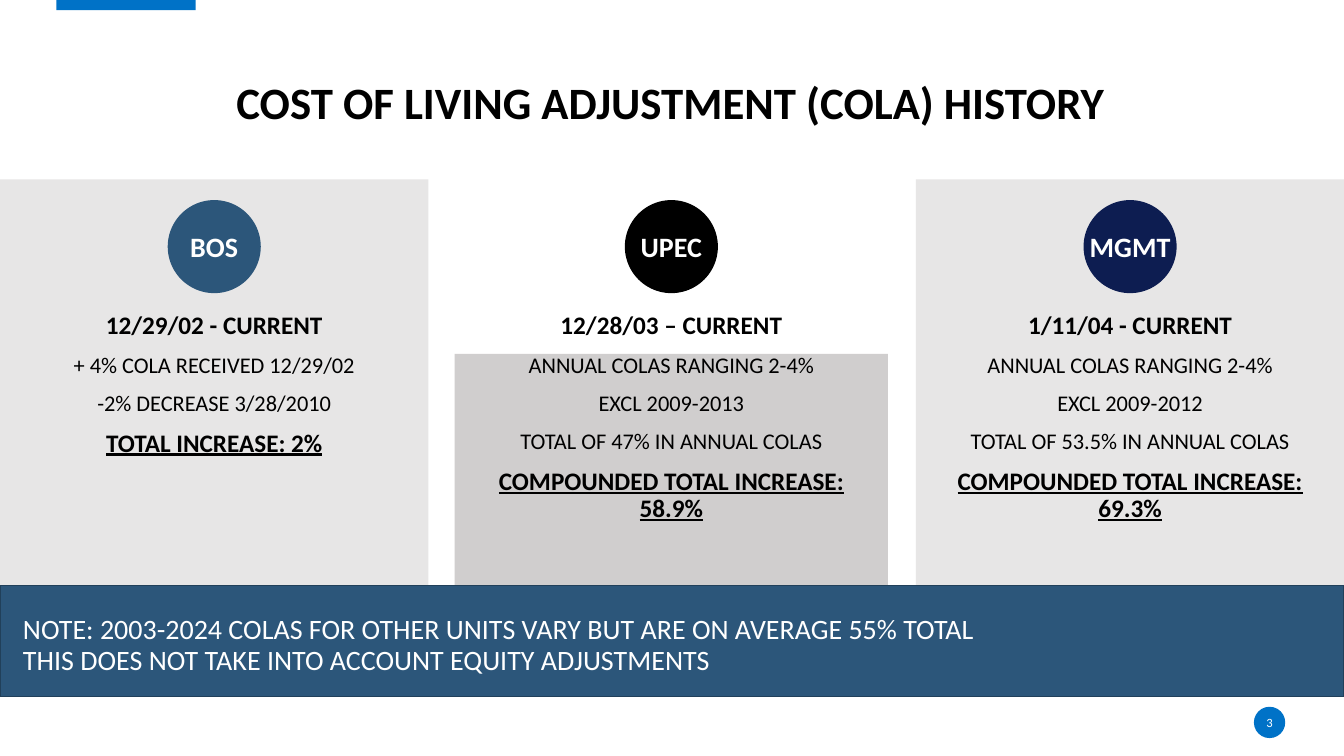
import pptx
import pptx.util
import pptx.dml.color
import pptx.enum.shapes
import pptx.enum.text

Cm = pptx.util.Cm
Pt = pptx.util.Pt
RGBColor = pptx.dml.color.RGBColor
SHAPE = pptx.enum.shapes.MSO_SHAPE
ALIGN = pptx.enum.text.PP_ALIGN
ANCHOR = pptx.enum.text.MSO_ANCHOR

WHITE = RGBColor(0xFF, 0xFF, 0xFF)
BLACK = RGBColor(0x00, 0x00, 0x00)
PALE = RGBColor(0xE7, 0xE6, 0xE6)
GREY = RGBColor(0xD0, 0xCE, 0xCE)
STEEL = RGBColor(0x2C, 0x56, 0x7A)
EDGE = RGBColor(0x21, 0x40, 0x5A)
NAVY = RGBColor(0x0D, 0x1D, 0x51)
BLUE = RGBColor(0x00, 0x72, 0xC7)

WIDE, HIGH = 33.87, 19.05
FONT = "Calibri"

# Each unit: panel left, panel width, panel fill, body width, body fill,
# badge fill, label, period, detail lines, total lines
UNITS = [
    (0, 10.8, PALE, 9.58, None, STEEL, "BOS", "12/29/02 - CURRENT",
     ["+ 4% COLA RECEIVED 12/29/02", "-2% DECREASE 3/28/2010"],
     ["TOTAL INCREASE: 2%"]),
    (11.46, 10.92, None, 10.92, GREY, BLACK, "UPEC", "12/28/03 – CURRENT",
     ["ANNUAL COLAS RANGING 2-4%", "EXCL 2009-2013",
      "TOTAL OF 47% IN ANNUAL COLAS"],
     ["COMPOUNDED TOTAL INCREASE:", "58.9%"]),
    (23.08, 10.8, PALE, 10.19, None, NAVY, "MGMT", "1/11/04 - CURRENT",
     ["ANNUAL COLAS RANGING 2-4%", "EXCL 2009-2012",
      "TOTAL OF 53.5% IN ANNUAL COLAS"],
     ["COMPOUNDED TOTAL INCREASE: 69.3%"]),
]


def add_form(slide, kind, box, fill, line=None):
    form = slide.shapes.add_shape(kind, *[Cm(side) for side in box])
    form.shadow.inherit = False
    form.fill.solid()
    form.fill.fore_color.rgb = fill
    if line is None:
        form.line.fill.background()
    else:
        form.line.color.rgb = line
        form.line.width = Pt(1)
    return form


def set_frame(shape, anchor, wrap=True):
    frame = shape.text_frame
    frame.word_wrap = wrap
    frame.vertical_anchor = anchor
    frame.margin_left = frame.margin_right = 0
    frame.margin_top = frame.margin_bottom = 0
    return frame


def add_text(slide, box, anchor):
    area = slide.shapes.add_textbox(*[Cm(side) for side in box])
    return set_frame(area, anchor)


def add_para(frame, lines, size, color=BLACK, bold=False, under=False,
             align=ALIGN.CENTER, gap=0, space=0.9):
    para = frame.paragraphs[0]
    if para.runs:
        para = frame.add_paragraph()
        para.space_before = Pt(gap)
    else:
        para.space_before = Pt(0)
    para.alignment = align
    para.line_spacing = space
    for count, line in enumerate(lines):
        if count:
            para.add_line_break()
        run = para.add_run()
        run.text = line
        run.font.name = FONT
        run.font.size = Pt(size)
        run.font.bold = bold
        run.font.underline = under
        run.font.color.rgb = color


def add_badge(slide, box, fill, label, size, bold, line=None):
    badge = add_form(slide, SHAPE.OVAL, box, fill, line)
    frame = set_frame(badge, ANCHOR.MIDDLE, wrap=False)
    add_para(frame, [label], size, WHITE, bold, space=1.0)


def add_head(slide, left, top, width, height):
    # Accent tab on the top edge
    add_form(slide, SHAPE.RECTANGLE, (left, 0, 3.51, 0.26), BLUE)
    # Title
    title = slide.shapes.title
    title.left, title.top = Cm(left), Cm(top)
    title.width, title.height = Cm(width), Cm(height)
    frame = set_frame(title, ANCHOR.BOTTOM)
    add_para(frame, ["COST OF LIVING ADJUSTMENT (COLA) HISTORY"], 32,
             bold=True)


def add_unit(slide, top, height, unit):
    (left, width, panel, span, shade, tint,
     label, period, facts, total) = unit
    mid = left + width / 2
    # Panel
    if panel is not None:
        add_form(slide, SHAPE.RECTANGLE, (left, top, width, height), panel)
    # Round badge
    size = 2.31
    add_badge(slide, (mid - size / 2, top + 0.54, size, size), tint, label,
              20, True, tint)
    # Period
    frame = add_text(slide, (mid - 4.79, top + 3.02, 9.58, 1.37),
                     ANCHOR.MIDDLE)
    add_para(frame, [period], 18, bold=True)
    # Details and total
    box = (mid - span / 2, top + 4.4, span, 6.96)
    if shade is None:
        frame = add_text(slide, box, ANCHOR.TOP)
    else:
        form = add_form(slide, SHAPE.RECTANGLE, box, shade)
        frame = set_frame(form, ANCHOR.TOP)
    for fact in facts:
        add_para(frame, [fact], 16, gap=10)
    add_para(frame, total, 18, bold=True, under=True, gap=10)


def add_note(slide, left, top, width, height):
    add_form(slide, SHAPE.RECTANGLE, (left, top, width, height), STEEL, EDGE)
    frame = add_text(slide, (left + 0.58, top + 0.35, 30.96, 1.93),
                     ANCHOR.BOTTOM)
    for line in (
        "NOTE: 2003-2024 COLAS FOR OTHER UNITS VARY BUT ARE ON AVERAGE "
        "55% TOTAL",
        "THIS DOES NOT TAKE INTO ACCOUNT EQUITY ADJUSTMENTS",
    ):
        add_para(frame, [line], 20, WHITE, align=ALIGN.LEFT)


def main():
    deck = pptx.Presentation()
    deck.slide_width, deck.slide_height = Cm(WIDE), Cm(HIGH)
    slide = deck.slides.add_slide(deck.slide_layouts[5])

    add_head(slide, 1.42, 0.69, 30.96, 2.57)
    for unit in UNITS:
        add_unit(slide, 4.52, 12.14, unit)
    add_note(slide, 0, 14.76, WIDE, 2.79)
    # Page number
    add_badge(slide, (31.6, 17.81, 0.79, 0.79), BLUE, "3", 9, False)

    deck.save("out.pptx")


if __name__ == "__main__":
    main()
